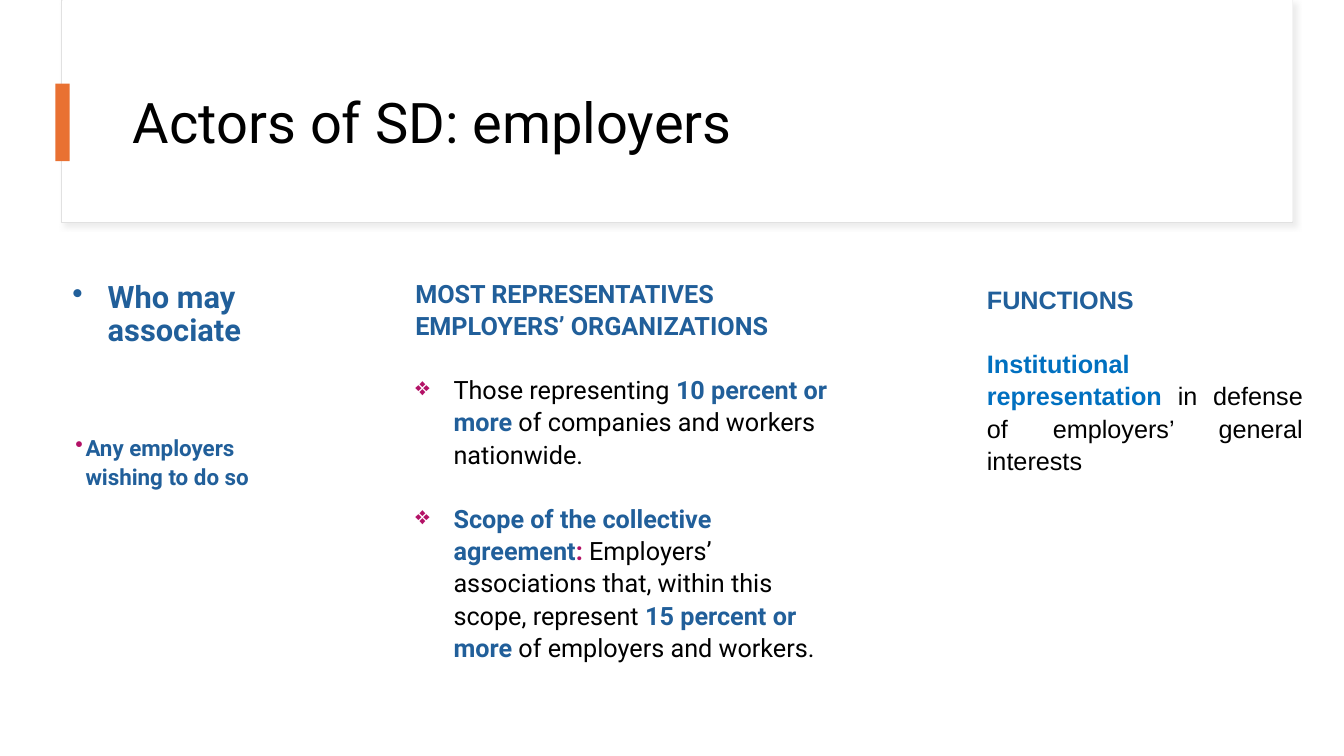
import pptx
import pptx.util
import pptx.dml.color
import pptx.enum.shapes
import pptx.enum.text
import pptx.oxml
import pptx.oxml.ns
from lxml import etree

Inches = pptx.util.Inches
Pt = pptx.util.Pt
RGB = pptx.dml.color.RGBColor
Align = pptx.enum.text.PP_ALIGN
Anchor = pptx.enum.text.MSO_ANCHOR
Fit = pptx.enum.text.MSO_AUTO_SIZE
qn = pptx.oxml.ns.qn

WHITE = RGB(0xFF, 0xFF, 0xFF)
BLACK = RGB(0, 0, 0)
EDGE = RGB(0xE1, 0xE1, 0xE1)
SHADE = RGB(0xD9, 0xD9, 0xD9)
ORANGE = RGB(0xE9, 0x71, 0x32)
NAVY = RGB(0x21, 0x5F, 0x9A)
AZURE = RGB(0x00, 0x70, 0xC0)
PLUM = RGB(0xB3, 0x11, 0x66)


def add_rect(slide, area, fill, edge=None):
    kind = pptx.enum.shapes.MSO_SHAPE.RECTANGLE
    rect = slide.shapes.add_shape(kind, *map(Inches, area))
    rect.shadow.inherit = False
    rect.fill.solid()
    rect.fill.fore_color.rgb = fill
    if edge is None:
        rect.line.fill.background()
    else:
        rect.line.color.rgb = edge
        rect.line.width = Pt(0.75)
    return rect


def add_shade(rect):
    effects = rect.element.spPr.find(qn("a:effectLst"))
    outer = etree.SubElement(effects, qn("a:outerShdw"), blurRad=str(Pt(4)),
                             dist=str(Pt(3)), dir=str(45 * 60000), algn="tl", rotWithShape="0")
    color = etree.SubElement(outer, qn("a:srgbClr"), val=str(SHADE))
    etree.SubElement(color, qn("a:alpha"), val="50000")


def add_box(slide, area, grow=True):
    frame = slide.shapes.add_textbox(*map(Inches, area)).text_frame
    frame.word_wrap = True
    frame.auto_size = Fit.SHAPE_TO_FIT_TEXT if grow else Fit.NONE
    return frame


def add_bullet(para, mark, color, indent):
    props = para._p.get_or_add_pPr()
    props.set("marL", str(Inches(indent)))
    props.set("indent", str(-Inches(indent)))
    tint = etree.SubElement(props, qn("a:buClr"))
    etree.SubElement(tint, qn("a:srgbClr"), val=str(color))
    etree.SubElement(props, qn("a:buChar"), char=mark)


def add_para(frame, runs, size, face="Roboto", space=1.07, after=15, bullet=None, align=Align.LEFT):
    para = frame.paragraphs[0]
    if para.runs:
        para = frame.add_paragraph()
        para.space_before = Pt(7.5)
    if bullet:
        add_bullet(para, *bullet)
    para.alignment = align
    para.line_spacing = space
    para.space_after = Pt(after)
    for text, color, bold in runs:
        run = para.add_run()
        run.text = text
        run.font.name = face
        run.font.size = Pt(size)
        run.font.bold = bold
        run.font.color.rgb = color


def add_header(slide):
    add_shade(add_rect(slide, (0.61, 0, 12.21, 2.21), WHITE, EDGE))
    add_rect(slide, (0.62, 0, 12.2, 2.2), WHITE)
    title = add_box(slide, (1.22, 0.6, 11.12, 1.29), grow=False)
    title.vertical_anchor = Anchor.MIDDLE
    add_para(title, [("Actors of SD: employers", BLACK, False)], 40, space=0.9, after=0)
    add_rect(slide, (0.55, 0.83, 0.14, 0.77), ORANGE)


def add_members(slide):
    topic = add_box(slide, (0.62, 2.75, 3.12, 4.04), grow=False)
    add_para(topic, [("Who may associate", NAVY, True)], 22, space=0.9, after=0,
             bullet=("•", NAVY, 0.35))
    answer = add_box(slide, (0.65, 4.24, 2.44, 0.67))
    add_para(answer, [("Any employers wishing to do so", NAVY, True)], 16,
             bullet=("•", PLUM, 0.1))


def add_roles(slide):
    roles = add_box(slide, (9.69, 2.75, 3.33, 2.02))
    add_para(roles, [("FUNCTIONS", NAVY, True)], 18, "Arial")
    add_para(roles, [
        ("Institutional representation ", AZURE, True),
        ("in defense of employers’ general interests", BLACK, False),
    ], 18, "Arial", align=Align.JUSTIFY)


def add_rules(slide):
    rules = add_box(slide, (4.02, 2.69, 4.42, 3.98))
    add_para(rules, [("MOST REPRESENTATIVES EMPLOYERS’ ORGANIZATIONS", NAVY, True)], 18)
    items = [
        [
            ("Those representing", BLACK, False),
            (" 10 percent or more ", NAVY, True),
            ("of companies and workers nationwide.", BLACK, False),
        ],
        [
            ("Scope of the collective agreement", NAVY, True),
            (": ", PLUM, True),
            ("Employers’ associations that, within this scope, represent ", BLACK, False),
            ("15 percent or more", NAVY, True),
            (" of employers and workers.", BLACK, False),
        ],
    ]
    for runs in items:
        add_para(rules, runs, 18, bullet=("❖", PLUM, 0.38))


def main():
    deck = pptx.Presentation()
    deck.slide_width = Inches(13.33)
    deck.slide_height = Inches(7.5)
    slide = deck.slides.add_slide(deck.slide_layouts[6])
    add_header(slide)
    add_members(slide)
    add_roles(slide)
    add_rules(slide)
    deck.save("out.pptx")


if __name__ == "__main__":
    main()
